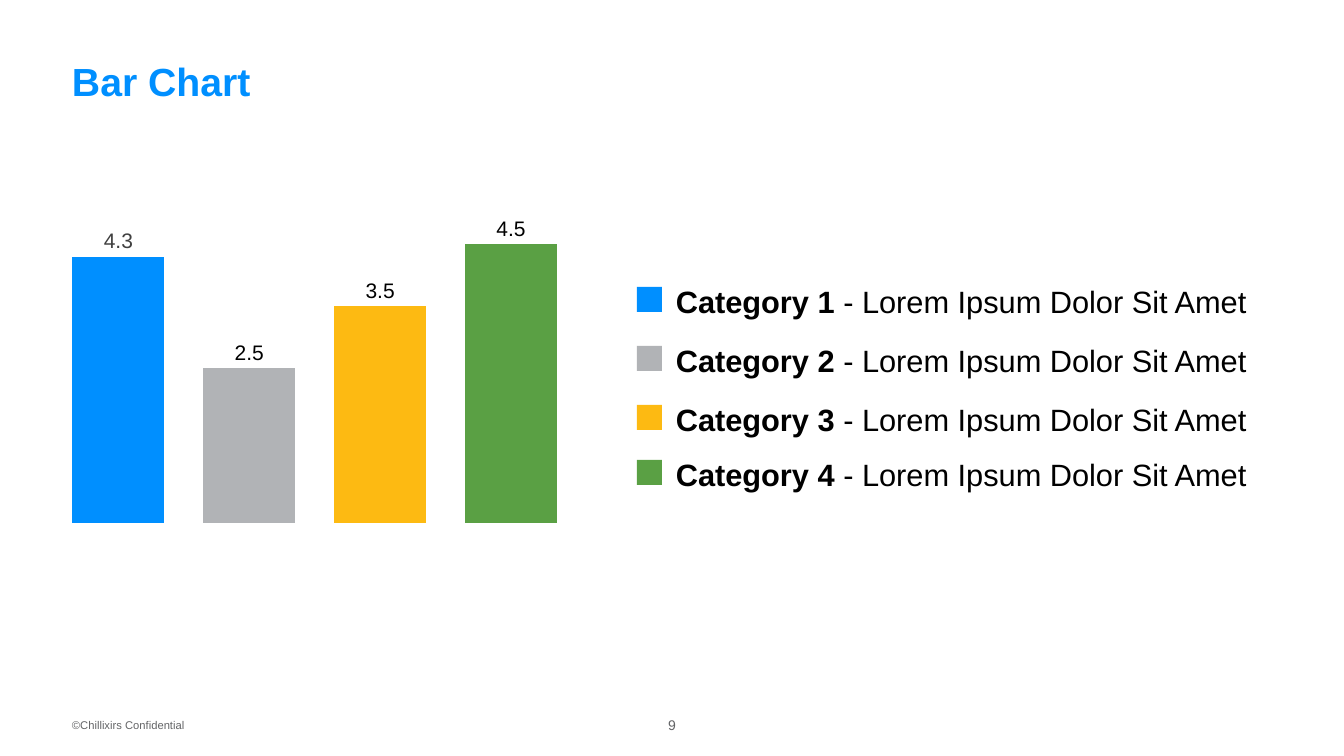
"""Build a slide with a four-colour column chart and its category key."""
from lxml.etree import SubElement
from pptx import Presentation
from pptx.chart.data import CategoryChartData
from pptx.dml.color import RGBColor
from pptx.enum.chart import XL_CHART_TYPE, XL_LABEL_POSITION
from pptx.enum.shapes import MSO_SHAPE
from pptx.enum.text import MSO_ANCHOR, MSO_AUTO_SIZE, PP_ALIGN
from pptx.oxml.ns import qn
from pptx.util import Emu, Pt

EMU_PER_PIXEL = 914400 / 100.8
FONT = "Arial"
BLACK = RGBColor(0x00, 0x00, 0x00)
CHARCOAL = RGBColor(0x40, 0x40, 0x40)
GRAY = RGBColor(0x63, 0x64, 0x66)
BLUE = RGBColor(0x00, 0x8F, 0xFF)
SILVER = RGBColor(0xB1, 0xB3, 0xB6)
YELLOW = RGBColor(0xFD, 0xBA, 0x12)
GREEN = RGBColor(0x5A, 0xA0, 0x44)
COLORS = (BLUE, SILVER, YELLOW, GREEN)
VALUES = (4.3, 2.5, 3.5, 4.5)
KEY_TOPS = (278, 337, 396, 451)
PLOT_AREA = {"x": 0.022, "y": 0.047, "w": 0.957, "h": 0.832}


def px(*lengths):
    return [Emu(round(length * EMU_PER_PIXEL)) for length in lengths]


def format_font(font, size, color, bold=False):
    font.name = FONT
    font.size = Pt(size)
    font.bold = bold
    font.color.rgb = color


def write_text(shape, runs, size=22, color=BLACK, align=PP_ALIGN.LEFT,
               anchor=MSO_ANCHOR.TOP, margins=None, wrap=True, line_spacing=None):
    frame = shape.text_frame
    frame.word_wrap = wrap
    frame.auto_size = MSO_AUTO_SIZE.NONE
    frame.vertical_anchor = anchor
    if margins is not None:
        (frame.margin_left, frame.margin_top,
         frame.margin_right, frame.margin_bottom) = px(*margins)
    paragraph = frame.paragraphs[0]
    paragraph.alignment = align
    paragraph.line_spacing = line_spacing
    for text, bold in runs:
        run = paragraph.add_run()
        run.text = text
        format_font(run.font, size, color, bold)


def add_title(slide, text):
    title = slide.shapes.title
    title.left, title.top, title.width, title.height = px(72, 65, 1202, 40)
    write_text(title, [(text, True)], size=28, color=BLUE,
               anchor=MSO_ANCHOR.BOTTOM, margins=(0, 0, 0, 0), line_spacing=0.9)


def add_text(slide, box, runs, **text_format):
    write_text(slide.shapes.add_textbox(*px(*box)), runs, **text_format)


def add_swatch(slide, left, top, color):
    swatch = slide.shapes.add_shape(MSO_SHAPE.RECTANGLE, *px(left, top, 25, 25))
    swatch.shadow.inherit = False
    swatch.fill.solid()
    swatch.fill.fore_color.rgb = color
    swatch.line.fill.background()


def set_plot_area(chart):
    plot_area = chart._chartSpace.chart.plotArea
    layout = plot_area.find(qn("c:layout"))
    if layout is None:
        layout = SubElement(plot_area, qn("c:layout"))
        plot_area.insert(0, layout)
    manual = SubElement(layout, qn("c:manualLayout"))
    settings = {"layoutTarget": "inner", "xMode": "edge", "yMode": "edge", **PLOT_AREA}
    for name, value in settings.items():
        SubElement(manual, qn(f"c:{name}")).set("val", str(value))


def add_column_chart(slide):
    data = CategoryChartData()
    data.categories = [str(number) for number in range(1, len(VALUES) + 1)]
    data.add_series("Series 1", VALUES)
    chart = slide.shapes.add_chart(
        XL_CHART_TYPE.COLUMN_CLUSTERED, *px(41, 196, 547, 372), data).chart
    chart.has_legend = False
    chart.has_title = False
    format_font(chart.font, 10, BLACK)
    set_plot_area(chart)
    for axis in (chart.category_axis, chart.value_axis):
        axis.has_major_gridlines = False
        axis.visible = False
    chart.value_axis.minimum_scale = 0
    chart.value_axis.maximum_scale = 5

    plot = chart.plots[0]
    plot.gap_width = 42
    plot.overlap = -27
    plot.vary_by_categories = False
    series = plot.series[0]
    series.format.fill.solid()
    series.format.fill.fore_color.rgb = BLUE
    for index, color in enumerate(COLORS):
        fill = series.points[index].format.fill
        fill.solid()
        fill.fore_color.rgb = color
    labels = series.data_labels
    labels.show_value = True
    labels.position = XL_LABEL_POSITION.OUTSIDE_END
    format_font(labels.font, 15, BLACK)
    first_label = series.points[0].data_label
    format_font(first_label.font, 15, CHARCOAL)
    first_label.position = XL_LABEL_POSITION.OUTSIDE_END


def add_key(slide):
    for number, (top, color) in enumerate(zip(KEY_TOPS, COLORS), start=1):
        add_swatch(slide, 637, top + 9, color)
        add_text(slide, (666, top, 637, 47),
                 [(f"Category {number} ", True), ("- Lorem Ipsum Dolor Sit Amet", False)])


def main():
    presentation = Presentation()
    presentation.slide_width, presentation.slide_height = px(1344, 756)
    slide = presentation.slides.add_slide(presentation.slide_layouts[5])
    add_title(slide, "Bar Chart")
    add_column_chart(slide)
    add_key(slide)
    add_text(slide, (618, 710, 108, 30), [("9", False)], size=10, color=GRAY,
             align=PP_ALIGN.CENTER, anchor=MSO_ANCHOR.MIDDLE,
             margins=(0, 5, 0, 5), wrap=False)
    add_text(slide, (72, 710, 194, 30), [("©Chillixirs Confidential", False)],
             size=8, color=GRAY, anchor=MSO_ANCHOR.MIDDLE, margins=(0, 0, 0, 0))
    presentation.save("out.pptx")


if __name__ == "__main__":
    main()
